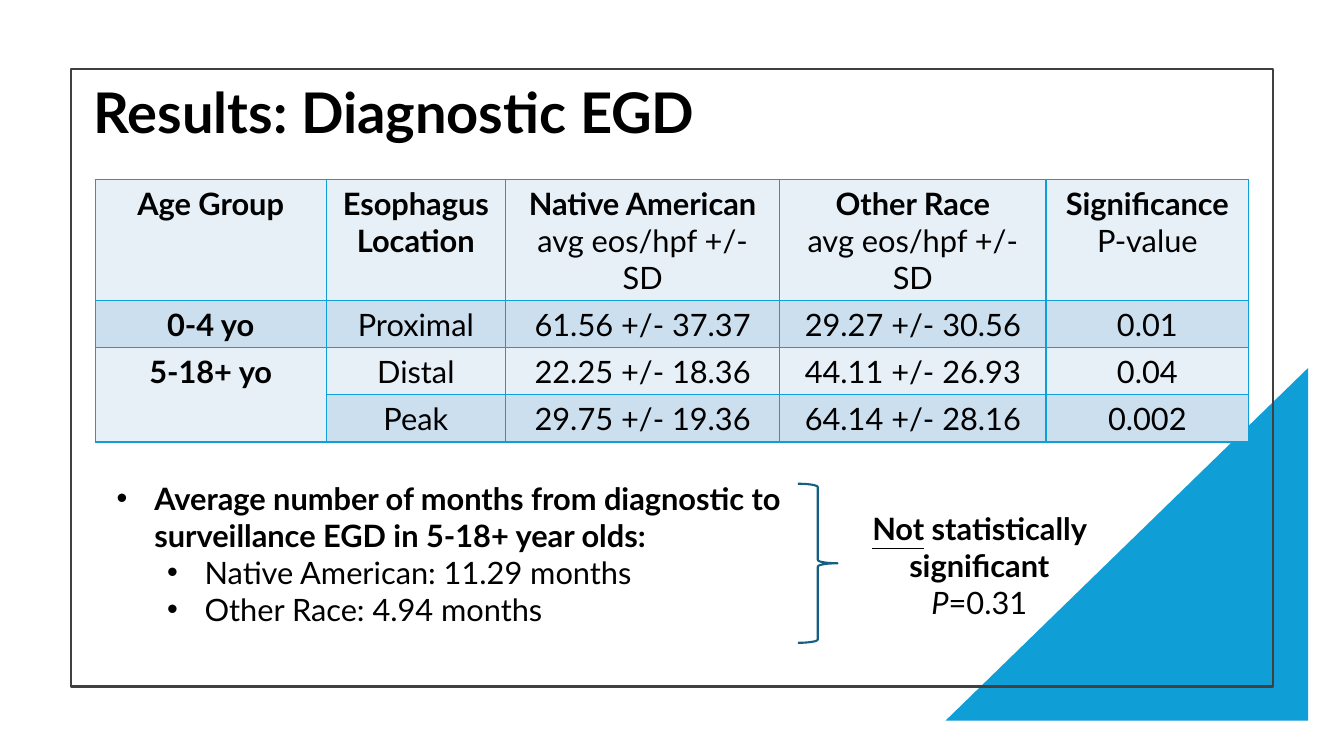
from lxml.etree import SubElement
from pptx import Presentation
from pptx.dml.color import RGBColor
from pptx.enum.shapes import MSO_SHAPE
from pptx.enum.text import MSO_ANCHOR, MSO_AUTO_SIZE, PP_ALIGN
from pptx.oxml.ns import qn
from pptx.util import Cm, Pt

COLORS = {
    "text": "000000",
    "accent": "0F9ED5",
    "frame": "404040",
    "brace": "156082",
    "light_band": "E7F0F7",
    "dark_band": "CCDFEF",
}
FONT = "Lato"
BODY_SIZE = 22
COLUMN_WIDTHS = [5.82, 4.52, 6.91, 6.71, 5.11]
ROW_HEIGHT = 1.04
HEADERS = [
    ["Age Group"],
    ["Esophagus Location"],
    ["Native American", "avg eos/hpf +/- SD"],
    ["Other Race", "avg eos/hpf +/- SD"],
    ["Significance", "P-value"],
]
ROWS = [
    ["0-4 yo", "Proximal", "61.56 +/- 37.37", "29.27 +/- 30.56", "0.01"],
    ["5-18+ yo", "Distal", "22.25 +/- 18.36", "44.11 +/- 26.93", "0.04"],
    ["", "Peak", "29.75 +/- 19.36", "64.14 +/- 28.16", "0.002"],
]


def color(name):
    """Return the named colour."""
    return RGBColor.from_string(COLORS[name])


def add_span(para, text, size=BODY_SIZE, bold=False, italic=False, underline=False):
    """Add one formatted run to a paragraph."""
    span = para.add_run()
    span.text = text
    font = span.font
    font.name, font.size = FONT, Pt(size)
    font.bold, font.italic, font.underline = bold, italic, underline
    font.color.rgb = color("text")


def add_paras(frame, paras, align=PP_ALIGN.CENTER):
    """Fill a text frame with paragraphs given as lists of (text, style) runs."""
    for index, spans in enumerate(paras):
        para = frame.add_paragraph() if index else frame.paragraphs[0]
        para.alignment = align
        for text, style in spans:
            add_span(para, text, **style)


def add_bullet(para, left):
    """Give a paragraph a hanging bullet with its text at the given indent."""
    properties = para._p.get_or_add_pPr()
    properties.set("marL", str(Cm(left)))
    properties.set("indent", str(-Cm(0.95)))
    SubElement(properties, qn("a:buFont"), typeface="Arial")
    SubElement(properties, qn("a:buChar"), char="•")


def add_figure(slide, kind, box, fill=None, line=None):
    """Add a preset shape with an optional fill and outline."""
    shape = slide.shapes.add_shape(kind, *map(Cm, box))
    shape.shadow.inherit = False
    if fill:
        shape.fill.solid()
        shape.fill.fore_color.rgb = color(fill)
    else:
        shape.fill.background()
    if line:
        shape.line.color.rgb = color(line)
        shape.line.width = Pt(1.5)
    else:
        shape.line.fill.background()
    return shape


def add_text(slide, box, paras, align):
    """Add a wrapping text box and return its frame."""
    frame = slide.shapes.add_textbox(*map(Cm, box)).text_frame
    frame.word_wrap = True
    add_paras(frame, paras, align)
    return frame


def add_backdrop(slide, box):
    """Draw the corner triangle and the thin frame within the page."""
    left, top, width, height = box
    corner = (left + width - 10.04, top + height - 9.78, 9.14, 8.89)
    triangle = add_figure(slide, MSO_SHAPE.RIGHT_TRIANGLE, corner, fill="accent")
    triangle._element.spPr.xfrm.set("flipH", "1")
    border = (left + 1.78, top + 1.73, width - 3.57, height - 3.48)
    add_figure(slide, MSO_SHAPE.RECTANGLE, border, line="frame")


def add_title(slide, box):
    """Place and format the title placeholder."""
    title = slide.shapes.title
    title.left, title.top, title.width, title.height = map(Cm, box)
    frame = title.text_frame
    frame.auto_size = MSO_AUTO_SIZE.NONE
    frame.vertical_anchor = MSO_ANCHOR.MIDDLE
    heading = [("Results: Diagnostic EGD", {"size": 40, "bold": True})]
    add_paras(frame, [heading], PP_ALIGN.LEFT)
    frame.paragraphs[0].line_spacing = 0.9


def format_cell(cell, fill):
    """Give a cell thin accent borders and a solid fill."""
    properties = cell._tc.get_or_add_tcPr()
    for side in ("lnL", "lnR", "lnT", "lnB"):
        line = SubElement(properties, qn(f"a:{side}"), w=str(Pt(1)))
        solid = SubElement(line, qn("a:solidFill"))
        SubElement(solid, qn("a:srgbClr"), val=COLORS["accent"])
    cell.fill.solid()
    cell.fill.fore_color.rgb = color(fill)


def add_results_table(slide, box):
    """Build the table of eosinophil counts by age group and location."""
    table = slide.shapes.add_table(
        len(ROWS) + 1, len(HEADERS), *map(Cm, box)
    ).table
    for column, width in zip(table.columns, COLUMN_WIDTHS):
        column.width = Cm(width)
    for row in table.rows:
        row.height = Cm(ROW_HEIGHT)
    for row_index, row in enumerate([HEADERS, *ROWS]):
        fill = "dark_band" if row_index % 2 else "light_band"
        for column_index, content in enumerate(row):
            cell = table.cell(row_index, column_index)
            spanned = row_index == 3 and column_index == 0
            format_cell(cell, "light_band" if spanned else fill)
            if spanned:
                continue
            lines = content if row_index == 0 else [content]
            strong = row_index == 0 or column_index == 0
            add_paras(cell.text_frame, [
                [(line, {"bold": strong and index == 0})]
                for index, line in enumerate(lines)
            ])
    table.cell(2, 0).merge(table.cell(3, 0))


def add_interval_summary(slide, box):
    """Place the bullets, the brace and the significance note."""
    left, top, width, height = box
    bold = {"bold": True}
    bullets = add_text(slide, (left, top, 17.78, height), [
        [("Average number of months from diagnostic to surveillance EGD "
          "in 5-18+ year olds:", bold)],
        [("Native American: 11.29 months", {})],
        [("Other Race: 4.94 months", {})],
    ], PP_ALIGN.LEFT)
    for index, para in enumerate(bullets.paragraphs):
        para.level = min(index, 1)
        add_bullet(para, 2.22 if index else 0.95)
    brace = (left + 17.42, top + 0.23, 1, height)
    add_figure(slide, MSO_SHAPE.RIGHT_BRACE, brace, line="brace")
    note = (left + width - 6.68, top + 0.76, 6.68, 3.07)
    add_text(slide, note, [
        [("Not", {"bold": True, "underline": True}),
         (" statistically significant", bold)],
        [("P", {"italic": True}), ("=0.31", {})],
    ], PP_ALIGN.CENTER)


def main():
    """Build and save the deck."""
    deck = Presentation()
    deck.slide_width, deck.slide_height = Cm(33.87), Cm(19.05)
    slide = deck.slides.add_slide(deck.slide_layouts[5])
    add_backdrop(slide, (0, 0, 33.87, 19.05))
    add_title(slide, (2.11, 2.06, 22.43, 1.7))
    add_results_table(slide, (2.4, 4.53, 29.07, 5.66))
    add_interval_summary(slide, (2.69, 11.96, 25.33, 4.01))
    deck.save("out.pptx")


if __name__ == "__main__":
    main()
